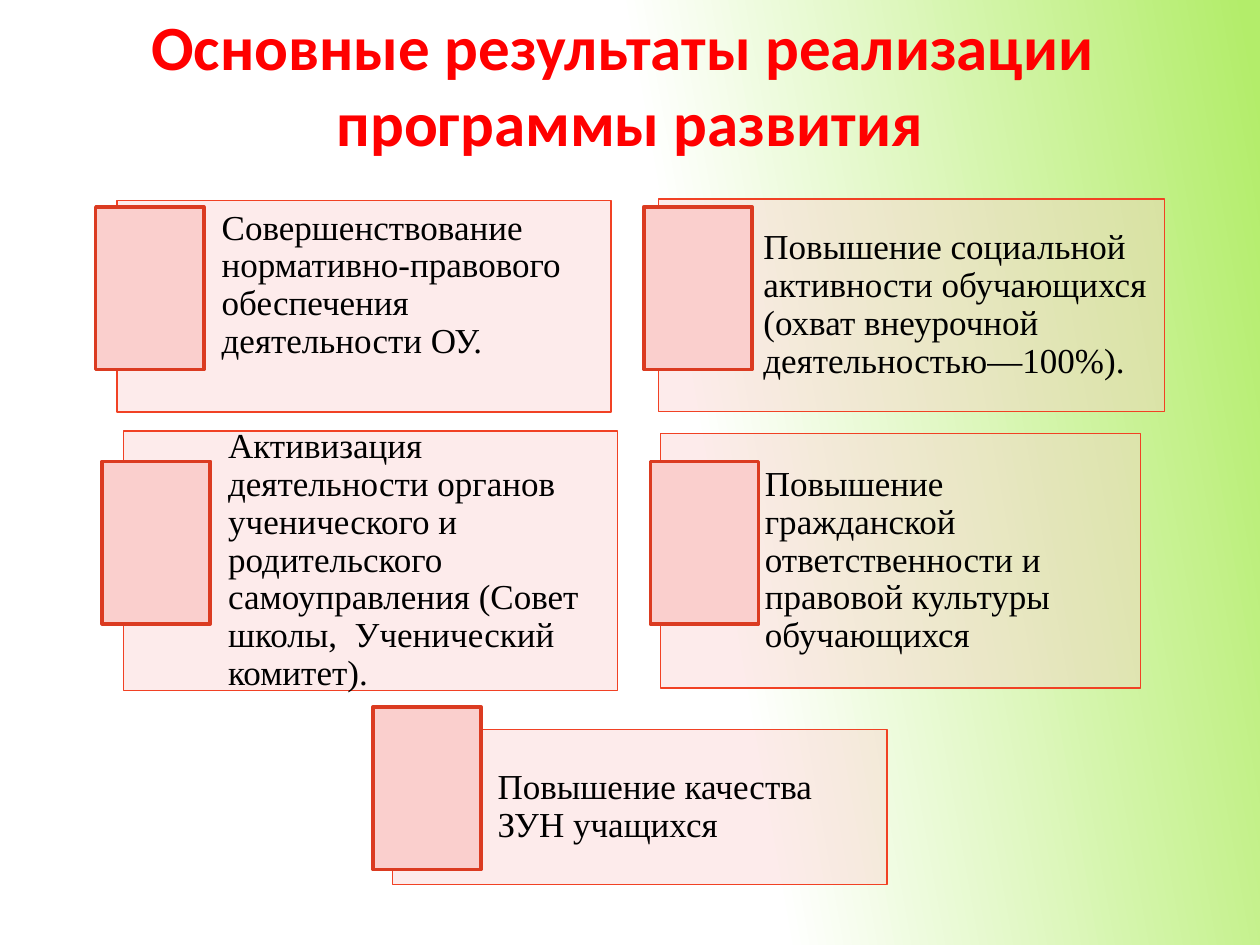
import pptx
import pptx.util
import pptx.dml.color
import pptx.enum.shapes
import pptx.enum.text
import pptx.oxml.ns
import lxml.etree

Cm, Pt = pptx.util.Cm, pptx.util.Pt
RECTANGLE = pptx.enum.shapes.MSO_SHAPE.RECTANGLE
ALIGN = pptx.enum.text.PP_ALIGN
ANCHOR = pptx.enum.text.MSO_ANCHOR

COLORS = {
    "title": "FF0000", "text": "000000", "pink": "FACFCD",
    "card line": "F14124", "marker line": "DB3B21",
    "white": "FFFFFF", "green": "B3ED6A",
}

TITLE = ["Основные результаты реализации ", "программы развития"]

# Text, card (left, top, width, height), marker (left, top), bottom inset; in cm
RESULTS = [
    ("Совершенствование нормативно-правового обеспечения деятельности ОУ.",
     (2.36, 4.04, 9.96, 4.27), (1.93, 4.17), 1.04),
    ("Повышение социальной активности обучающихся (охват внеурочной "
     "деятельностью—100%).",
     (13.28, 4.01, 10.19, 4.29), (12.98, 4.17), 0.2),
    ("Активизация деятельности органов ученического и родительского "
     "самоуправления (Совет школы,  Ученический комитет).",
     (2.49, 8.69, 9.96, 5.23), (2.06, 9.3), 0.2),
    ("Повышение гражданской ответственности и правовой культуры обучающихся",
     (13.31, 8.74, 9.68, 5.13), (13.11, 9.3), 0.2),
    ("Повышение качества ЗУН учащихся",
     (7.92, 14.71, 9.96, 3.12), (7.52, 14.25), 0.2),
]
MARKER_SIZE = (2.18, 3.28)


def rgb(name):
    return pptx.dml.color.RGBColor.from_string(COLORS[name])


def format_font(font, name, size, color):
    font.name = name
    font.size = Pt(size)
    font.color.rgb = rgb(color)


def add_rectangle(slide, box, line, width):
    rectangle = slide.shapes.add_shape(RECTANGLE, *map(Cm, box))
    rectangle.shadow.inherit = False
    rectangle.fill.solid()
    rectangle.fill.fore_color.rgb = rgb("pink")
    rectangle.line.color.rgb = rgb(line)
    rectangle.line.width = Pt(width)
    return rectangle


def add_card(slide, text, box, bottom_inset):
    card = add_rectangle(slide, box, "card line", 0.75)
    # 40 % opaque fill
    qn = pptx.oxml.ns.qn
    fill_color = card.fill._xPr.find(qn("a:solidFill")).find(qn("a:srgbClr"))
    lxml.etree.SubElement(fill_color, qn("a:alpha"), val="40000")

    frame = card.text_frame
    frame.word_wrap = True
    frame.vertical_anchor = ANCHOR.MIDDLE
    frame.margin_left = Cm(2.11)
    frame.margin_top = frame.margin_right = Cm(0.2)
    frame.margin_bottom = Cm(bottom_inset)
    frame.text = text
    paragraph = frame.paragraphs[0]
    paragraph.alignment = ALIGN.LEFT
    paragraph.line_spacing = 0.9
    format_font(paragraph.font, "Times New Roman", 20, "text")


def main():
    deck = pptx.Presentation()
    deck.slide_width, deck.slide_height = Cm(25.4), Cm(19.05)
    slide = deck.slides.add_slide(deck.slide_layouts[5])

    # Background
    background = slide.background.fill
    background.gradient()
    background.gradient_angle = 10
    for stop, position, color in zip(background.gradient_stops,
                                     (0.55, 0.99), ("white", "green")):
        stop.position = position
        stop.color.rgb = rgb(color)

    # Title
    title = slide.shapes.title
    title.left, title.top, title.width, title.height = map(
        Cm, (0, 0.03, 25.4, 3.33))
    frame = title.text_frame
    frame.text = "\n".join(TITLE)
    frame.word_wrap = True
    frame.auto_size = pptx.enum.text.MSO_AUTO_SIZE.NONE
    frame.vertical_anchor = ANCHOR.TOP
    for paragraph in frame.paragraphs:
        paragraph.alignment = ALIGN.CENTER
        paragraph.space_before = Pt(0)
        format_font(paragraph.font, "Calibri", 36, "title")
        paragraph.font.bold = True

    # Result cards, each with its marker in front
    for text, card_box, marker_corner, bottom_inset in RESULTS:
        add_card(slide, text, card_box, bottom_inset)
        add_rectangle(slide, marker_corner + MARKER_SIZE, "marker line", 2)

    deck.save("out.pptx")


if __name__ == "__main__":
    main()
